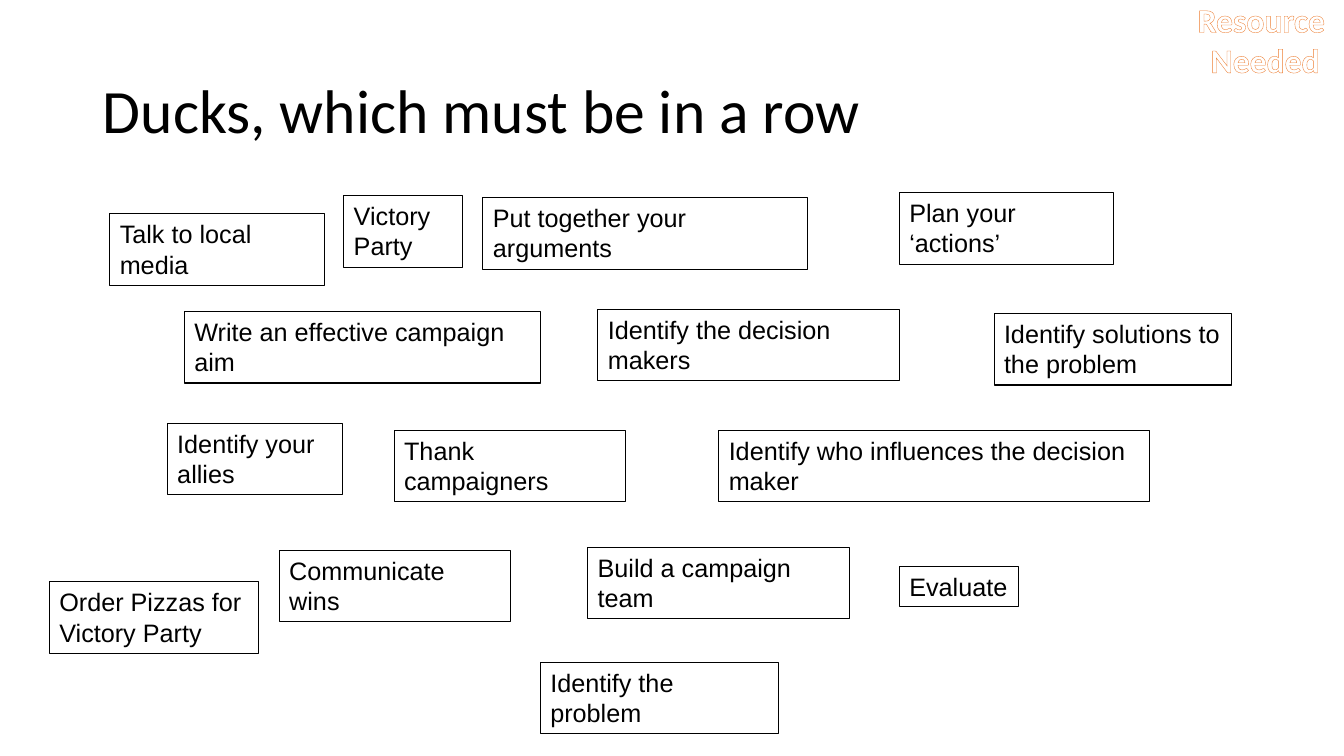
from dataclasses import dataclass

from lxml.etree import SubElement
from pptx import Presentation
from pptx.dml.color import RGBColor
from pptx.enum.text import MSO_ANCHOR, MSO_AUTO_SIZE, PP_ALIGN
from pptx.oxml.ns import qn
from pptx.util import Inches, Pt


@dataclass(frozen=True)
class Theme:
    ink: str = "000000"
    paper: str = "FFFFFF"
    accent: str = "ED7D31"
    title_font: str = "Calibri"
    card_font: str = "Arial"
    title_size: int = 44
    tag_size: int = 24
    card_size: int = 18
    border: float = 0.75
    tag_outline: float = 0.52


THEME = Theme()
TWO_LINES, ONE_LINE = 0.71, 0.4
FIRST_STEP = "Identify the problem"

# Campaign steps: text, left, top, width, height
STEPS = [
    (FIRST_STEP, 5.36, 6.57, 2.36, TWO_LINES),
    ("Identify solutions to the problem", 9.86, 3.11, 2.36, TWO_LINES),
    ("Build a campaign team", 5.83, 5.43, 2.6, TWO_LINES),
    ("Write an effective campaign aim", 1.83, 3.09, 3.53, TWO_LINES),
    ("Identify the decision makers", 5.93, 3.07, 2.99, TWO_LINES),
    ("Identify who influences the decision maker", 7.13, 4.27, 4.27, TWO_LINES),
    ("Identify your allies", 1.66, 4.2, 1.74, TWO_LINES),
    ("Put together your arguments", 4.79, 1.96, 3.22, TWO_LINES),
    ("Plan your ‘actions’", 8.92, 1.91, 2.12, TWO_LINES),
    ("Talk to local media", 1.09, 2.12, 2.13, TWO_LINES),
    ("Thank campaigners", 3.91, 4.27, 2.29, TWO_LINES),
    ("Communicate wins", 2.77, 5.46, 2.29, TWO_LINES),
    ("Evaluate", 8.92, 5.62, 1.18, ONE_LINE),
    ("Victory Party", 3.41, 1.94, 1.18, TWO_LINES),
    ("Order Pizzas for Victory Party", 0.49, 5.77, 2.07, TWO_LINES),
]


def color(value):
    return RGBColor.from_string(value)


def add_span(para, text, font, size, ink, bold=False):
    span = para.add_run()
    span.text = text
    span.font.name = font
    span.font.size = Pt(size)
    span.font.bold = bold
    span.font.color.rgb = color(ink)
    return span


def outline_span(span, ink, width):
    properties = span.font._element
    line = SubElement(properties, qn("a:ln"), w=str(Pt(width)))
    fill = SubElement(line, qn("a:solidFill"))
    SubElement(fill, qn("a:srgbClr"), val=ink)
    properties.insert(0, line)


def place_title(page, box):
    title = page.shapes.title
    title.left, title.top, title.width, title.height = map(Inches, box)
    frame = title.text_frame
    frame.auto_size = MSO_AUTO_SIZE.NONE
    frame.vertical_anchor = MSO_ANCHOR.MIDDLE
    para = frame.paragraphs[0]
    para.alignment = PP_ALIGN.LEFT
    para.line_spacing = 0.9
    add_span(para, "Ducks, which must be in a row",
             THEME.title_font, THEME.title_size, THEME.ink)


def add_step(page, text, box):
    card = page.shapes.add_textbox(*map(Inches, box))
    if text == FIRST_STEP:
        card.fill.solid()
        card.fill.fore_color.rgb = color(THEME.paper)
    card.line.color.rgb = color(THEME.ink)
    card.line.width = Pt(THEME.border)
    frame = card.text_frame
    frame.word_wrap = True
    frame.auto_size = MSO_AUTO_SIZE.SHAPE_TO_FIT_TEXT
    add_span(frame.paragraphs[0], text,
             THEME.card_font, THEME.card_size, THEME.ink)


def add_resource_tag(page, box):
    tag = page.shapes.add_textbox(*map(Inches, box))
    frame = tag.text_frame
    frame.word_wrap = False
    frame.auto_size = MSO_AUTO_SIZE.SHAPE_TO_FIT_TEXT
    para = frame.paragraphs[0]
    para.alignment = PP_ALIGN.CENTER
    for index, text in enumerate(("Resource", " Needed")):
        if index:
            para.add_line_break()
        span = add_span(para, text, THEME.title_font, THEME.tag_size,
                        THEME.paper, bold=True)
        outline_span(span, THEME.accent, THEME.tag_outline)


def build_steps_slide(deck):
    page = deck.slides.add_slide(deck.slide_layouts.get_by_name("Title Only"))
    # Heading
    place_title(page, (0.92, 0.4, 11.5, 1.45))
    # Scattered steps to put in order
    for text, *box in STEPS:
        add_step(page, text, box)
    # Corner tag
    add_resource_tag(page, (11.69, -0.06, 1.64, 0.91))


def main():
    deck = Presentation()
    deck.slide_width, deck.slide_height = Inches(13.33), Inches(7.5)
    build_steps_slide(deck)
    deck.save("out.pptx")


if __name__ == "__main__":
    main()
